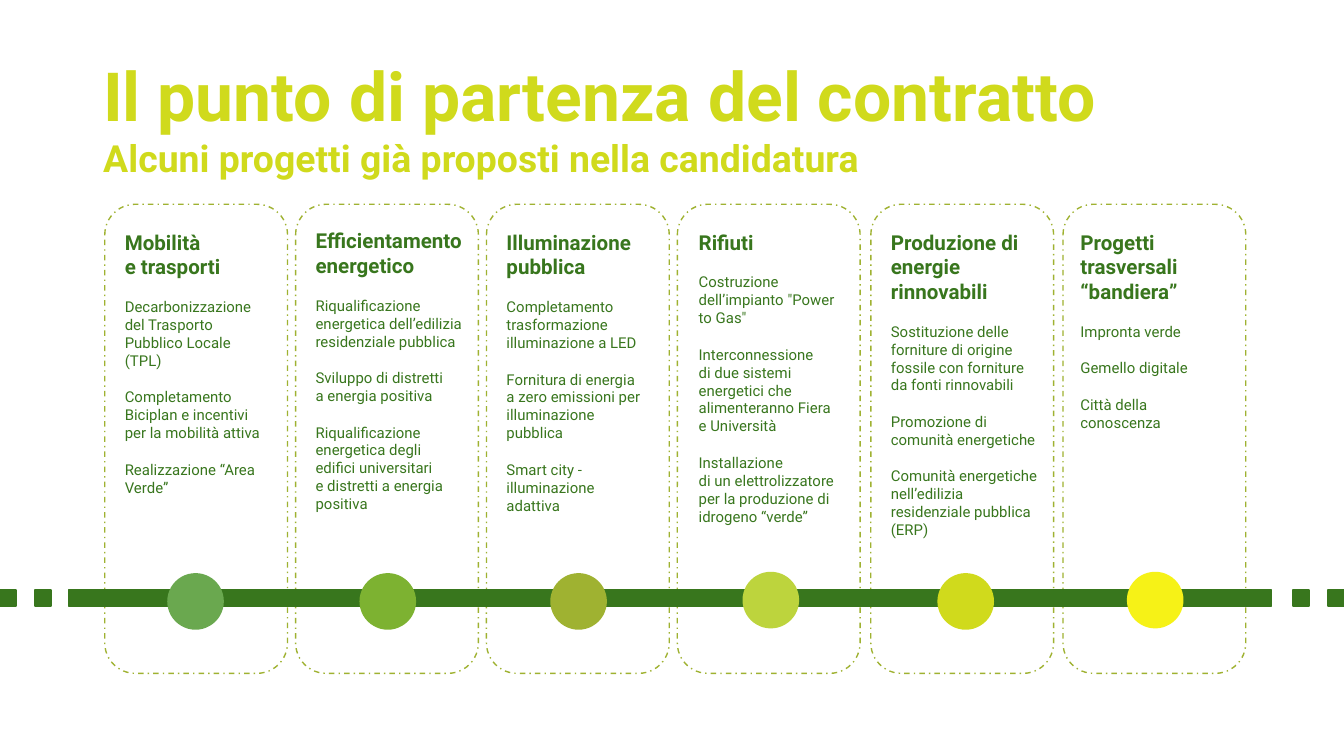
from copy import deepcopy
from dataclasses import dataclass

from pptx import Presentation
from pptx.dml.color import RGBColor
from pptx.enum.dml import MSO_LINE
from pptx.enum.shapes import MSO_SHAPE
from pptx.oxml.ns import qn
from pptx.util import Inches, Pt

FRAME = MSO_SHAPE.FLOWCHART_ALTERNATE_PROCESS
RECT = MSO_SHAPE.RECTANGLE
OVAL = MSO_SHAPE.OVAL
DASH_DOT = MSO_LINE.DASH_DOT

WIDTH = 10
HEIGHT = WIDTH * 9 / 16
COLUMN_LEFT, COLUMN_PITCH, COLUMN_WIDTH = 0.78, 1.42, 1.36
FRAME_TOP, FRAME_HEIGHT = 1.52, 3.49
TIMELINE_TOP, TIMELINE_THICKNESS = 4.39, 0.12
DASH_STEP = 0.26
DOT_SIZE = 0.39
LIME, OLIVE, GREEN = "D0DA1C", "9FB231", "38761D"
FONT = "Roboto"


@dataclass(frozen=True)
class Theme:
    heading: str
    projects: tuple[str, ...]
    dot_color: str
    shift: float = 0
    text_inset: float = 0.05
    text_top: float = 1.61
    text_width: float = 1.25
    text_height: float = 2.66
    dot_inset: float = 0.49
    dot_top: float = 4.28


THEMES = (
    Theme("Mobilità \ne trasporti", (
        "Decarbonizzazione del Trasporto Pubblico Locale (TPL)",
        "Completamento Biciplan e incentivi per la mobilità attiva",
        "Realizzazione “Area Verde”",
    ), "6AA84F", text_height=2.21, dot_inset=0.48),
    Theme("Efficientamento energetico", (
        "Riqualificazione energetica dell’edilizia residenziale pubblica",
        "Sviluppo di distretti \na energia positiva",
        "Riqualificazione energetica degli edifici universitari \n"
        "e distretti a energia positiva",
    ), "7DB231", text_top=1.6, text_width=1.3, text_height=2.9),
    Theme("Illuminazione pubblica", (
        "Completamento trasformazione illuminazione a LED",
        "Fornitura di energia \na zero emissioni per illuminazione pubblica",
        "Smart city - illuminazione adattiva",
    ), OLIVE, text_height=2.58),
    Theme("Rifiuti", (
        "Costruzione dell’impianto \"Power to Gas\"",
        "Interconnessione \ndi due sistemi energetici che alimenteranno Fiera e Università",
        "Installazione \ndi un elettrolizzatore per la produzione di idrogeno “verde”",
    ), "BDD43D", text_inset=0.06, dot_inset=0.5, dot_top=4.27),
    Theme("Produzione di energie rinnovabili", (
        "Sostituzione delle forniture di origine fossile con forniture da fonti rinnovabili",
        "Promozione di comunità energetiche",
        "Comunità energetiche nell’edilizia residenziale pubblica (ERP)",
    ), LIME, shift=0.02, text_width=1.31, text_height=2.76, dot_inset=0.51),
    Theme("Progetti trasversali “bandiera”", (
        "Impronta verde",
        "Gemello digitale",
        "Città della conoscenza",
    ), "F6F217", shift=0.03, text_inset=0.03, text_width=1.31, text_height=2.02, dot_top=4.27),
)


def color(hex_value: str) -> RGBColor:
    return RGBColor.from_string(hex_value)


def add_figure(slide, kind, left: float, top: float, width: float, height: float,
               line: str, weight: float = 0.75, fill: str | None = None, dash=None) -> None:
    figure = slide.shapes.add_shape(
        kind, Inches(left), Inches(top), Inches(width), Inches(height))
    figure.shadow.inherit = False
    if fill:
        figure.fill.solid()
        figure.fill.fore_color.rgb = color(fill)
    else:
        figure.fill.background()
    figure.line.color.rgb = color(line)
    figure.line.width = Pt(weight)
    if dash is not None:
        figure.line.dash_style = dash


def add_text_area(slide, left: float, top: float, width: float, height: float):
    frame = slide.shapes.add_textbox(
        Inches(left), Inches(top), Inches(width), Inches(height)).text_frame
    frame.word_wrap = True
    frame.margin_left = frame.margin_right = Inches(0.1)
    frame.margin_top = frame.margin_bottom = Inches(0.1)
    return frame


def write(frame, text: str, *, size: float, ink: str, bold: bool = False,
          before: float = 0, first: bool = False) -> None:
    paragraph = frame.paragraphs[0] if first else frame.add_paragraph()
    paragraph.text = text.replace("\n", "\v")
    paragraph.space_before = Pt(before)
    for run in paragraph.runs:
        run.font.name = FONT
        run.font.size = Pt(size)
        run.font.bold = bold
        run.font.color.rgb = color(ink)
    run_format = paragraph._p.find(qn("a:r")).find(qn("a:rPr"))
    for line_break in paragraph._p.findall(qn("a:br")):
        line_break.insert(0, deepcopy(run_format))


def column_left(index: int, theme: Theme) -> float:
    return COLUMN_LEFT + index * COLUMN_PITCH + theme.shift


def add_frame(slide, index: int, theme: Theme) -> None:
    add_figure(slide, FRAME, column_left(index, theme), FRAME_TOP,
               COLUMN_WIDTH, FRAME_HEIGHT, OLIVE, dash=DASH_DOT)


def add_timeline(slide) -> None:
    dash = TIMELINE_THICKNESS
    end = WIDTH - dash
    segments = ((0.51, 8.95), (0, dash), (DASH_STEP, dash),
                (end - DASH_STEP, dash), (end, dash))
    for left, length in segments:
        add_figure(slide, RECT, left, TIMELINE_TOP, length,
                   TIMELINE_THICKNESS, GREEN, fill=GREEN)


def add_theme(slide, index: int, theme: Theme) -> None:
    left = column_left(index, theme)
    frame = add_text_area(slide, left + theme.text_inset, theme.text_top,
                          theme.text_width, theme.text_height)
    write(frame, theme.heading, size=11, ink=GREEN, bold=True, first=True)
    for project in theme.projects:
        write(frame, project, size=8, ink=GREEN, before=10)
    add_figure(slide, OVAL, left + theme.dot_inset, theme.dot_top, DOT_SIZE, DOT_SIZE,
               theme.dot_color, weight=2.25, fill=theme.dot_color)


def main() -> None:
    deck = Presentation()
    deck.slide_width, deck.slide_height = Inches(WIDTH), Inches(HEIGHT)
    slide = deck.slides.add_slide(deck.slide_layouts[6])
    for index, theme in enumerate(THEMES):
        add_frame(slide, index, theme)
    add_timeline(slide)
    title = add_text_area(slide, 0.67, 0.3, 9.33, 0.71)
    write(title, "Il punto di partenza del contratto",
          size=36.3, ink=LIME, bold=True, first=True)
    write(title, "Alcuni progetti già proposti nella candidatura",
          size=20, ink=LIME, bold=True)
    for index, theme in enumerate(THEMES):
        add_theme(slide, index, theme)
    deck.save("out.pptx")


if __name__ == "__main__":
    main()
